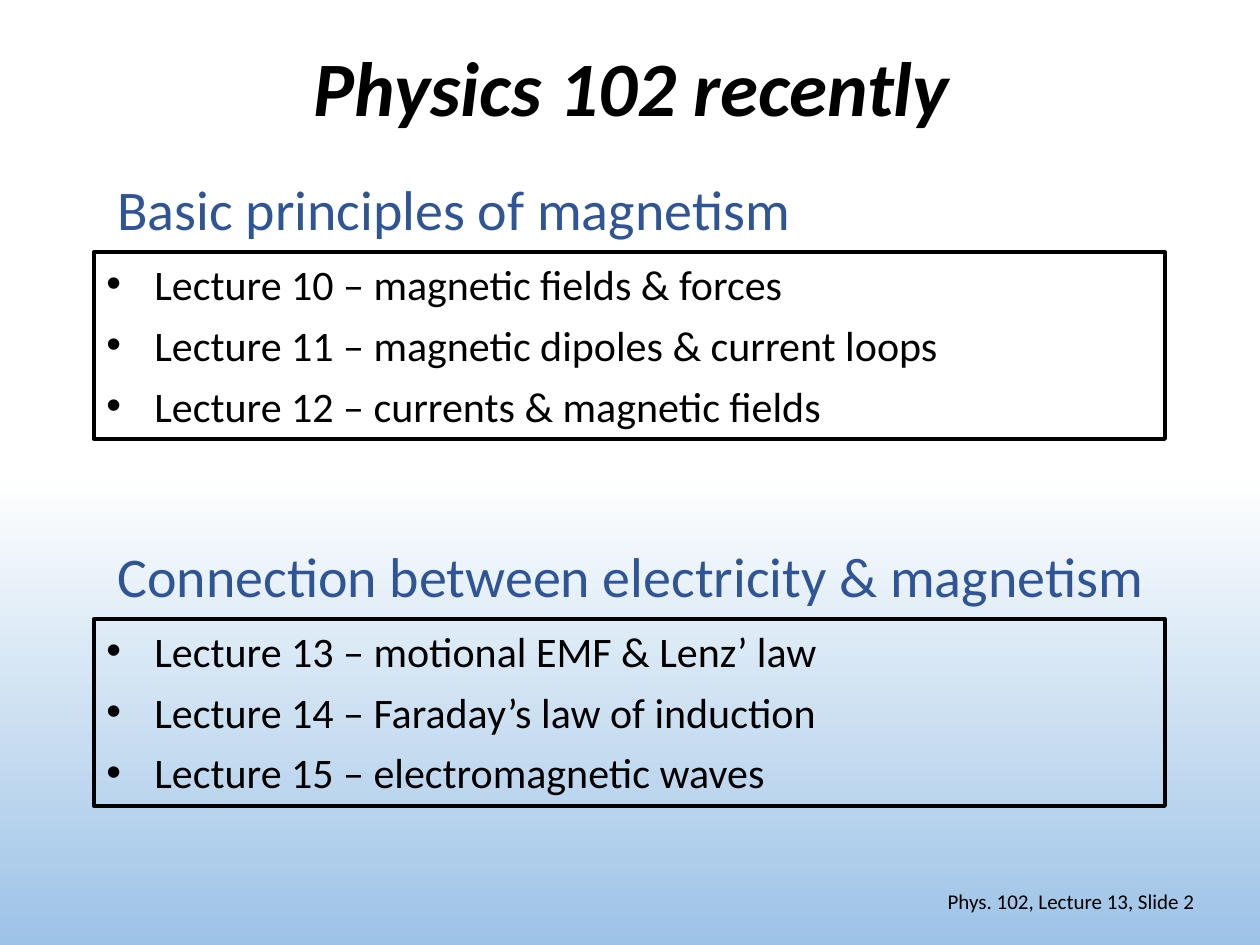
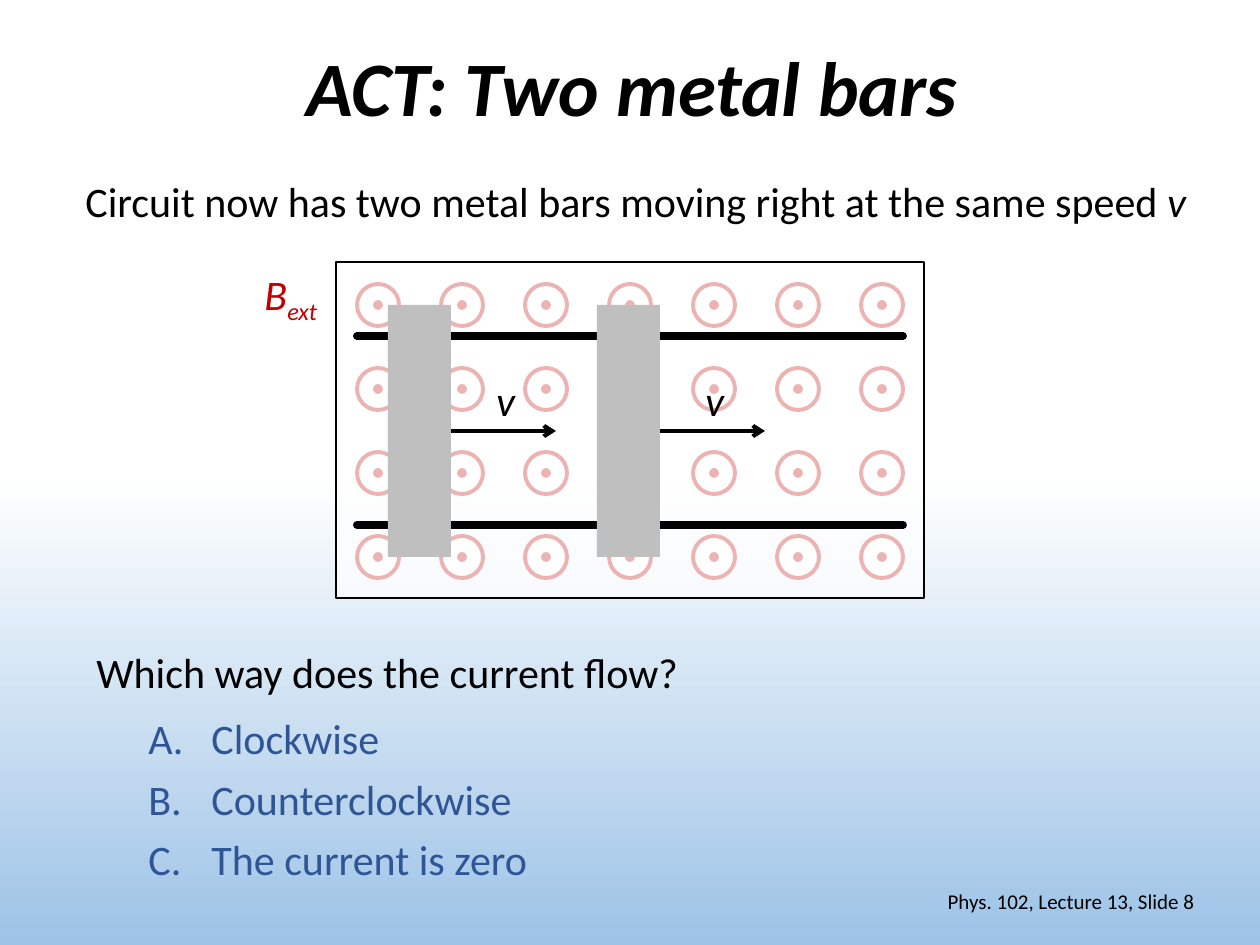
from lxml import etree
from pptx import Presentation
from pptx import util as u
from pptx.dml.color import RGBColor
from pptx.enum import shapes, text
from pptx.oxml.ns import qn

PX = u.Inches(1) / 126
FONT = "Calibri"
BLACK = RGBColor(0x00, 0x00, 0x00)
WHITE = RGBColor(0xFF, 0xFF, 0xFF)
SKY = RGBColor(0x9D, 0xC3, 0xE6)
BLUE = RGBColor(0x2F, 0x55, 0x97)
RED = RGBColor(0xC0, 0x00, 0x00)
GRAY = RGBColor(0xBF, 0xBF, 0xBF)


def px(*lengths):
    return [u.Emu(round(length * PX)) for length in lengths]


def style_runs(frame, size, color, bold=False, italic=False):
    for paragraph in frame.paragraphs:
        for run in paragraph.runs:
            font = run.font
            font.name, font.size, font.color.rgb = FONT, u.Pt(size), color
            font.bold, font.italic = bold, italic


def add_label(parent, box, words, size=24, color=BLACK, bold=False, italic=False,
              wrap=True, align=text.PP_ALIGN.LEFT, anchor=text.MSO_ANCHOR.TOP):
    frame = parent.add_textbox(*px(*box)).text_frame
    frame.word_wrap = wrap
    frame.vertical_anchor = anchor
    frame.text = words
    for paragraph in frame.paragraphs:
        paragraph.alignment = align
    style_runs(frame, size, color, bold, italic)
    return frame


def add_tail(frame, words):
    paragraph = frame.paragraphs[0]
    lead = paragraph.runs[0].font
    tail = paragraph.add_run()
    tail.text = words
    tail.font.name, tail.font.size = FONT, lead.size
    tail.font.color.rgb = lead.color.rgb
    tail.font.italic = True
    return tail


def add_list_marks(frame, indent, tag, **attributes):
    for paragraph in frame.paragraphs:
        paragraph.space_after = u.Pt(6)
        properties = paragraph._p.get_or_add_pPr()
        margin = px(indent)[0]
        properties.set("marL", str(margin))
        properties.set("indent", str(-margin))
        if tag == "a:buChar":
            etree.SubElement(properties, qn("a:buFont")).set("typeface", "Arial")
        etree.SubElement(properties, qn(tag), **attributes)


def add_figure(parent, kind, box, fill=None, line=None, width=1):
    figure = parent.add_shape(kind, *px(*box))
    figure.shadow.inherit = False
    if fill is None:
        figure.fill.background()
    else:
        figure.fill.solid()
        figure.fill.fore_color.rgb = fill
    if line is None:
        figure.line.fill.background()
    else:
        figure.line.color.rgb = line
        figure.line.width = u.Pt(width)
    return figure


def add_line(parent, start, end, width):
    line = parent.add_connector(shapes.MSO_CONNECTOR.STRAIGHT, *px(*start, *end))
    line.line.color.rgb = BLACK
    line.line.width = u.Pt(width)
    etree.SubElement(line._element.spPr, qn("a:effectLst"))
    return line


def add_lecture_slide(deck, title, number):
    slide = deck.slides.add_slide(deck.slide_layouts[6])
    backdrop = slide.background.fill
    backdrop.gradient()
    backdrop.gradient_angle = 270
    for stop, position, color in zip(backdrop.gradient_stops, (0.5, 1), (WHITE, SKY)):
        stop.position = position
        stop.color.rgb = color
    heading = add_label(slide.shapes, (89, 0, 1086, 183), title, 44, bold=True, italic=True,
                        align=text.PP_ALIGN.CENTER, anchor=text.MSO_ANCHOR.MIDDLE)
    heading.paragraphs[0].line_spacing = 0.9
    add_label(slide.shapes, (890, 876, 317, 50), f"Phys. 102, Lecture 13, Slide {number}", 12,
              align=text.PP_ALIGN.RIGHT, anchor=text.MSO_ANCHOR.MIDDLE)
    return slide.shapes


def add_topic(canvas, top, width, topic, lectures):
    add_label(canvas, (105, top, width, 81), topic, 32, BLUE, wrap=False)
    panel = add_figure(canvas, shapes.MSO_SHAPE.RECTANGLE, (94, top + 84, 1071, 187),
                       line=BLACK, width=2.25)
    frame = panel.text_frame
    frame.word_wrap = True
    frame.vertical_anchor = text.MSO_ANCHOR.TOP
    frame.text = "\n".join(lectures)
    for paragraph in frame.paragraphs:
        paragraph.alignment = text.PP_ALIGN.LEFT
    style_runs(frame, 24, BLACK)
    add_list_marks(frame, 48, "a:buChar", char="•")


def add_field(canvas):
    field = canvas.add_group_shape().shapes
    oval = shapes.MSO_SHAPE.OVAL
    for row in range(4):
        for column in range(7):
            if column == 3 and row in (1, 2):
                continue
            left, top = 357 + 84 * column, 284 + 84 * row
            add_figure(field, oval, (left, top, 42, 42), WHITE, RED, 2.25)
            add_figure(field, oval, (left + 17, top + 17, 8, 8), RED, RED)
    veil = add_figure(canvas, shapes.MSO_SHAPE.RECTANGLE, (336, 262, 588, 336), WHITE, BLACK)
    tint = veil._element.spPr.find(qn("a:solidFill"))[0]
    etree.SubElement(tint, qn("a:alpha")).set("val", "70000")


def add_rail(canvas, y):
    rail = add_line(canvas, (903, y), (357, y), 4.5)
    rail.line._get_or_add_ln().set("cap", "rnd")


def add_moving_bar(canvas, left):
    group = canvas.add_group_shape().shapes
    bar = add_figure(group, shapes.MSO_SHAPE.RECTANGLE, (left, 305, 63, 252), GRAY)
    velocity = add_line(group, (left + 63, 431), (left + 168, 431), 2.25)
    velocity.begin_connect(bar, 3)
    etree.SubElement(velocity.line._get_or_add_ln(), qn("a:tailEnd")).set("type", "arrow")
    add_label(group, (left + 96, 368, 63, 63), "v", italic=True)


def build_recap(deck):
    canvas = add_lecture_slide(deck, "Physics 102 recently", 2)
    add_topic(canvas, 168, 706, "Basic principles of magnetism", [
        "Lecture 10 – magnetic fields & forces",
        "Lecture 11 – magnetic dipoles & current loops",
        "Lecture 12 – currents & magnetic fields"])
    add_topic(canvas, 535, 1063, "Connection between electricity & magnetism", [
        "Lecture 13 – motional EMF & Lenz’ law",
        "Lecture 14 – Faraday’s law of induction",
        "Lecture 15 – electromagnetic waves"])


def build_act(deck):
    canvas = add_lecture_slide(deck, "ACT: Two metal bars", 8)
    setup = add_label(canvas, (73, 169, 1134, 63),
                      "Circuit now has two metal bars moving right at the same speed ")
    add_tail(setup, "v")
    add_field(canvas)
    symbol = add_label(canvas, (252, 262, 83, 63), "B", color=RED, italic=True, wrap=False)
    add_tail(symbol, "ext").font._element.set("baseline", "-25000")
    for y in (336, 525):
        add_rail(canvas, y)
    for left in (388, 597):
        add_moving_bar(canvas, left)
    add_label(canvas, (84, 640, 620, 63), "Which way does the current flow?")
    answers = add_label(canvas, (136, 706, 494, 186),
                        "Clockwise\nCounterclockwise\nThe current is zero", color=BLUE)
    add_list_marks(answers, 63, "a:buAutoNum", type="alphaUcPeriod")


def main():
    deck = Presentation()
    deck.slide_width, deck.slide_height = px(1260, 945)
    build_recap(deck)
    build_act(deck)
    deck.save("out.pptx")


if __name__ == "__main__":
    main()
